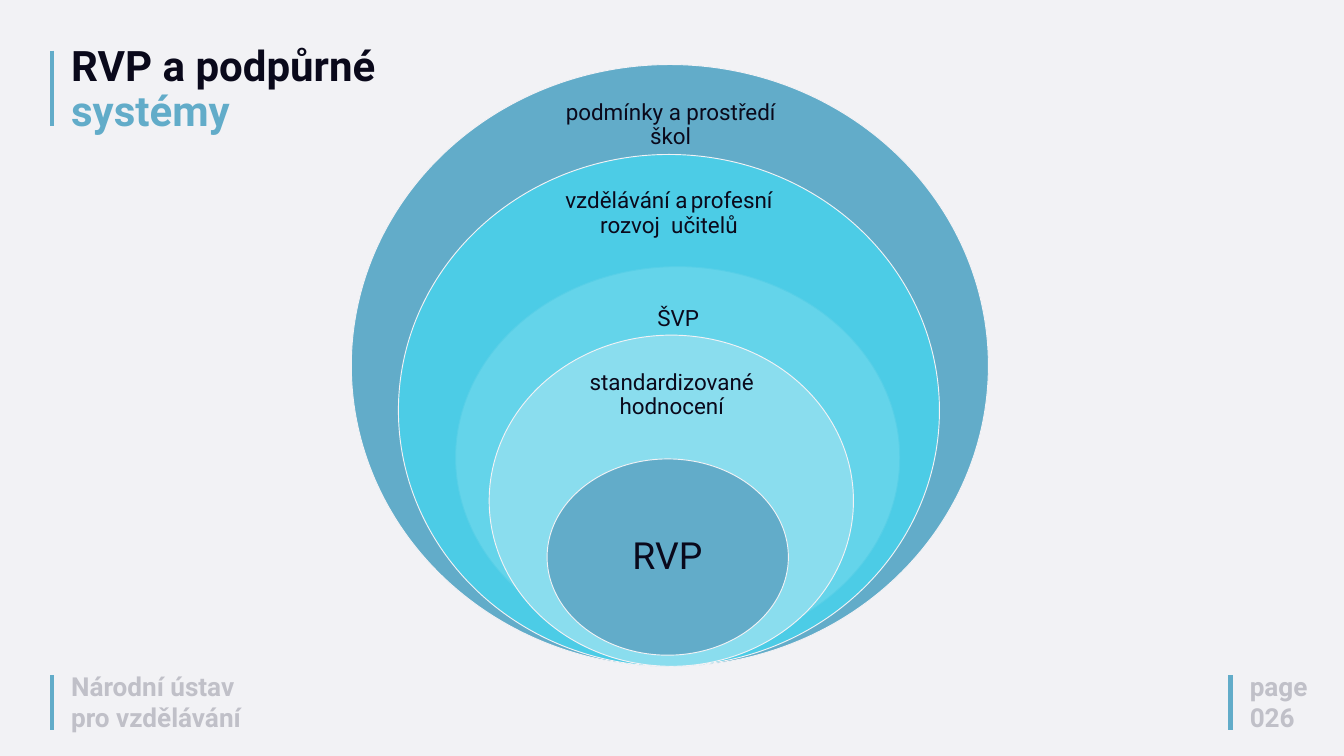
from dataclasses import dataclass

import pptx
import pptx.dml.color
import pptx.enum.shapes
import pptx.enum.text
import pptx.oxml.ns
import pptx.shapes.autoshape
import pptx.slide
import pptx.text.text
import pptx.util
from lxml import etree
from pptx.dml.color import RGBColor
from pptx.util import Cm

FONT = "Roboto"
PAPER = RGBColor(0xF2, 0xF2, 0xF5)
INK = RGBColor(0x0A, 0x09, 0x1B)
GREY = RGBColor(0xC0, 0xC0, 0xC8)
BLUE = RGBColor(0x62, 0xAC, 0xC9)
CYAN = RGBColor(0x4C, 0xCC, 0xE6)
LIGHT_CYAN = RGBColor(0x64, 0xD4, 0xEA)
CYAN_EDGE = RGBColor(0x57, 0xCF, 0xE7)
PALE_CYAN = RGBColor(0x8A, 0xDD, 0xEE)


@dataclass(frozen=True)
class Frame:
    """Left, top, width and height in centimetres."""
    left: float
    top: float
    width: float
    height: float

    def lengths(self) -> tuple[Cm, Cm, Cm, Cm]:
        return Cm(self.left), Cm(self.top), Cm(self.width), Cm(self.height)


@dataclass(frozen=True)
class Span:
    text: str
    size: float
    color: RGBColor = INK
    bold: bool = False


@dataclass(frozen=True)
class Layer:
    oval: Frame
    fill: RGBColor
    label: Frame
    spans: tuple[Span, ...]
    edge: RGBColor = PAPER
    inset: float = 0.47


@dataclass(frozen=True)
class Bar:
    left: float
    top: float
    bottom: float


BARS = (
    Bar(1.96, 1.91, 4.78),
    Bar(1.96, 25.53, 27.58),
    Bar(46.51, 25.53, 27.58),
)

LAYERS = (
    Layer(Frame(13.28, 2.44, 24.08, 22.76), BLUE, Frame(20.83, 3.58, 9.04, 2.29),
          (Span("podmínky a prostředí škol", 24),)),
    Layer(Frame(15.06, 5.84, 20.45, 19.35), CYAN, Frame(20.88, 6.96, 8.81, 2.24),
          (Span("vzdělávání a", 24), Span(" ", 14), Span("profesní rozvoj  učitelů", 24))),
    Layer(Frame(17.22, 10.08, 16.79, 14.43), LIGHT_CYAN, Frame(21.29, 11.07, 8.69, 1.98),
          (Span("ŠVP", 24),), edge=CYAN_EDGE),
    Layer(Frame(18.49, 12.67, 13.77, 12.52), PALE_CYAN, Frame(21.67, 13.82, 7.44, 2.26),
          (Span("standardizované hodnocení", 24),)),
    Layer(Frame(20.68, 17.35, 9.12, 7.42), BLUE, Frame(22, 19.2, 6.45, 3.71),
          (Span("RVP", 40),), inset=0.79),
)


def add_bar(page: pptx.slide.Slide, bar: Bar) -> None:
    line = page.shapes.add_connector(
        pptx.enum.shapes.MSO_CONNECTOR.STRAIGHT,
        Cm(bar.left), Cm(bar.top), Cm(bar.left), Cm(bar.bottom))
    line.line.color.rgb = BLUE
    line.line.width = pptx.util.Pt(5)
    etree.SubElement(line._element.spPr, pptx.oxml.ns.qn("a:effectLst"))


def add_box(page: pptx.slide.Slide, frame: Frame) -> pptx.shapes.autoshape.Shape:
    box = page.shapes.add_textbox(*frame.lengths())
    box.text_frame.word_wrap = True
    return box


def add_spans(para: pptx.text.text._Paragraph, spans: tuple[Span, ...]) -> None:
    for span in spans:
        run = para.add_run()
        run.text = span.text
        run.font.name = FONT
        run.font.size = pptx.util.Pt(span.size)
        run.font.bold = span.bold
        run.font.color.rgb = span.color


def add_layer(page: pptx.slide.Slide, layer: Layer) -> None:
    """Draw one oval and its centred label."""
    oval = page.shapes.add_shape(
        pptx.enum.shapes.MSO_SHAPE.OVAL, *layer.oval.lengths())
    oval.shadow.inherit = False
    oval.fill.solid()
    oval.fill.fore_color.rgb = layer.fill
    oval.line.color.rgb = layer.edge
    oval.line.width = pptx.util.Pt(1)

    text_frame = add_box(page, layer.label).text_frame
    text_frame.vertical_anchor = pptx.enum.text.MSO_ANCHOR.MIDDLE
    text_frame.margin_left = text_frame.margin_right = Cm(layer.inset)
    text_frame.margin_top = text_frame.margin_bottom = Cm(layer.inset)
    para = text_frame.paragraphs[0]
    para.alignment = pptx.enum.text.PP_ALIGN.CENTER
    para.line_spacing = 0.9
    add_spans(para, layer.spans)


def add_title(page: pptx.slide.Slide) -> None:
    para = add_box(page, Frame(2.44, 1.57, 15.14, 3.71)).text_frame.paragraphs[0]
    para.line_spacing = 0.9
    add_spans(para, (Span("RVP a podpůrné ", 45, INK, True),
                     Span("systémy", 45, BLUE, True)))


def add_footer(page: pptx.slide.Slide, frame: Frame, text: str) -> None:
    text_frame = add_box(page, frame).text_frame
    text_frame.text = text
    for para in text_frame.paragraphs:
        for run in para.runs:
            run.font.name = FONT
            run.font.size = pptx.util.Pt(28)
            run.font.bold = True
            run.font.color.rgb = GREY


def main() -> None:
    deck = pptx.Presentation()
    deck.slide_width, deck.slide_height = Cm(50.8), Cm(28.58)
    page = deck.slides.add_slide(deck.slide_layouts[6])
    page.background.fill.solid()
    page.background.fill.fore_color.rgb = PAPER

    for bar in BARS:
        add_bar(page, bar)
    add_footer(page, Frame(2.44, 25.22, 7.72, 2.64), "Národní ústav pro vzdělávání")
    add_title(page)
    add_footer(page, Frame(46.99, 25.2, 4.83, 2.64), "page\n026")
    for layer in LAYERS:
        add_layer(page, layer)

    deck.save("out.pptx")


if __name__ == "__main__":
    main()
